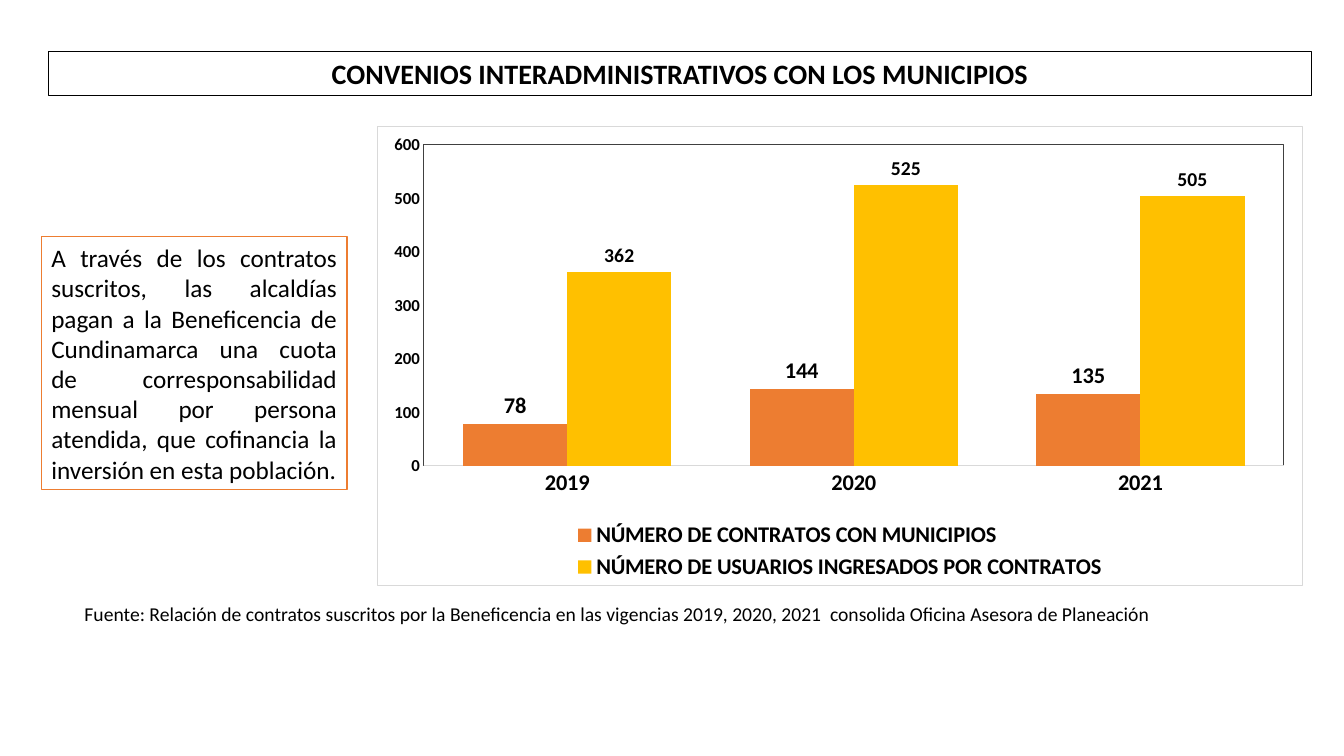
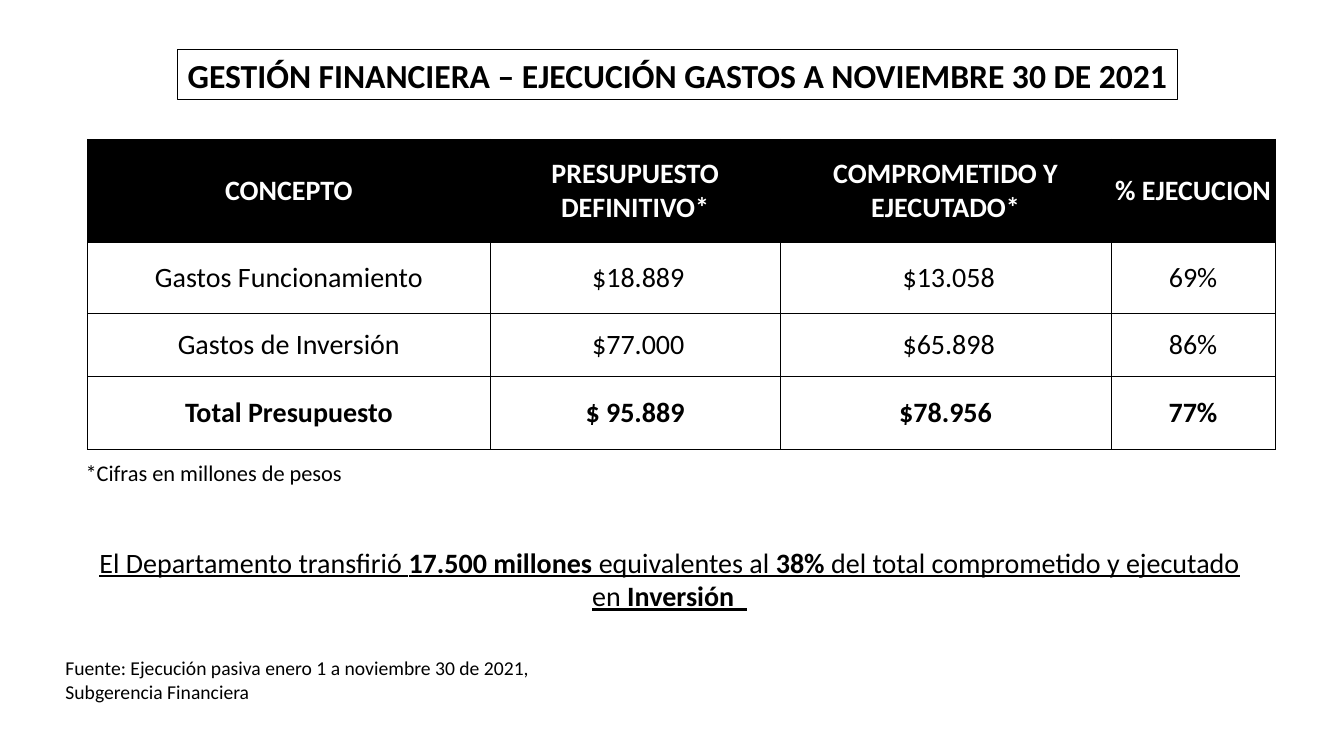
import pptx
import pptx.chart.data
import pptx.dml.color
import pptx.enum.chart
import pptx.enum.text
import pptx.oxml
import pptx.oxml.ns
import pptx.util

BLACK = pptx.dml.color.RGBColor(0x00, 0x00, 0x00)
WHITE = pptx.dml.color.RGBColor(0xFF, 0xFF, 0xFF)
ORANGE = pptx.dml.color.RGBColor(0xED, 0x7D, 0x31)
GOLD = pptx.dml.color.RGBColor(0xFF, 0xC0, 0x00)
PALE_GREY = pptx.dml.color.RGBColor(0xD9, 0xD9, 0xD9)
DARK_GREY = pptx.dml.color.RGBColor(0x40, 0x40, 0x40)
FONT = "Calibri"
ALIGN = pptx.enum.text.PP_ALIGN
MIDDLE = pptx.enum.text.MSO_ANCHOR.MIDDLE

deck = pptx.Presentation()
deck.slide_width = pptx.util.Inches(13.33)
deck.slide_height = pptx.util.Inches(7.5)


def place(left, top, width, height):
    """Turn percentages of the slide's width and height into lengths."""
    sides = (deck.slide_width, deck.slide_height) * 2
    return [int(side * share / 100) for side, share in zip(sides, (left, top, width, height))]


def write(frame, text, size, align=ALIGN.LEFT, bold=False, color=BLACK):
    """Fill a text frame with one paragraph and format its runs."""
    frame.word_wrap = True
    para = frame.paragraphs[0]
    para.text = text
    para.alignment = align
    for span in para.runs:
        span.font.name = FONT
        span.font.size = pptx.util.Pt(size)
        span.font.bold = bold
        span.font.color.rgb = color
    return para


# Pages with their framed titles
titles = [
    ("CONVENIOS INTERADMINISTRATIVOS CON LOS MUNICIPIOS", 20, (3.6, 6.8, 94, 5.87)),
    ("GESTIÓN FINANCIERA – EJECUCIÓN GASTOS A NOVIEMBRE 30 DE 2021", 24, (13.2, 6.53, 74.42, 6.67)),
]
pages = []
for text, size, area in titles:
    page = deck.slides.add_slide(deck.slide_layouts.get_by_name("Title Only"))
    title = page.shapes.title
    title.left, title.top, title.width, title.height = place(*area)
    title.fill.solid()
    title.fill.fore_color.rgb = WHITE
    title.line.color.rgb = BLACK
    title.line.width = pptx.util.Pt(1)
    write(title.text_frame, text, size, ALIGN.CENTER, bold=True)
    title.text_frame.word_wrap = False
    title.text_frame.auto_size = pptx.enum.text.MSO_AUTO_SIZE.NONE
    title.text_frame.vertical_anchor = MIDDLE
    pages.append(page)
agreements, finance = pages

# Plain notes and sources
notes = [
    (agreements, "Fuente: Relación de contratos suscritos por la Beneficencia en las vigencias "
     "2019, 2020, 2021  consolida Oficina Asesora de Planeación",
     14, ALIGN.JUSTIFY, (5.55, 78.93, 88.97, 4.53)),
    (finance, "*Cifras en millones de pesos", 16, ALIGN.LEFT, (5.63, 60.13, 21.23, 4.93)),
    (finance, "Fuente: Ejecución pasiva enero 1 a noviembre 30 de 2021, Subgerencia Financiera",
     14, ALIGN.LEFT, (4.13, 86.13, 41.41, 7.6)),
]
for page, text, size, align, area in notes:
    write(page.shapes.add_textbox(*place(*area)).text_frame, text, size, align)

# Agreements: framed explanation
box = agreements.shapes.add_textbox(*place(3.08, 31.33, 22.73, 33.47))
box.fill.solid()
box.fill.fore_color.rgb = WHITE
box.line.color.rgb = ORANGE
box.line.width = pptx.util.Pt(1)
box.text_frame.vertical_anchor = MIDDLE
write(box.text_frame,
      "A través de los contratos suscritos, las alcaldías pagan a la Beneficencia de Cundinamarca "
      "una cuota de corresponsabilidad mensual por persona atendida, que cofinancia la inversión "
      "en esta población.", 18, ALIGN.JUSTIFY)

# Agreements: column chart
series_styles = [
    ("NÚMERO DE CONTRATOS CON MUNICIPIOS", (78, 144, 135), ORANGE, 16),
    ("NÚMERO DE USUARIOS INGRESADOS POR CONTRATOS", (362, 525, 505), GOLD, 14),
]
chart_data = pptx.chart.data.CategoryChartData()
chart_data.categories = ["2019", "2020", "2021"]
for name, values, color, label_size in series_styles:
    chart_data.add_series(name, values)
chart = agreements.shapes.add_chart(
    pptx.enum.chart.XL_CHART_TYPE.COLUMN_CLUSTERED,
    *place(28.06, 16.67, 68.87, 60.8), chart_data).chart
chart.has_title = False
chart.font.name = FONT
chart.font.size = pptx.util.Pt(10)
chart.font.bold = True
chart.font.color.rgb = BLACK
chart.has_legend = True
chart.legend.position = pptx.enum.chart.XL_LEGEND_POSITION.BOTTOM
chart.legend.include_in_layout = False
chart.legend.font.size = pptx.util.Pt(16)

for axis, size in ((chart.category_axis, 16), (chart.value_axis, 12)):
    axis.has_major_gridlines = False
    axis.major_tick_mark = pptx.enum.chart.XL_TICK_MARK.NONE
    axis.minor_tick_mark = pptx.enum.chart.XL_TICK_MARK.NONE
    axis.tick_labels.font.size = pptx.util.Pt(size)
    axis.tick_labels.font.bold = True
chart.category_axis.format.line.color.rgb = PALE_GREY
chart.category_axis.format.line.width = pptx.util.Pt(0.75)
chart.value_axis.format.line.fill.background()
chart.value_axis.minimum_scale = 0
chart.value_axis.maximum_scale = 600
chart.value_axis.major_unit = 100

plot = chart.plots[0]
plot.gap_width = 75
plot.overlap = 0
plot.vary_by_categories = False
for series, (name, values, color, label_size) in zip(plot.series, series_styles):
    series.format.fill.solid()
    series.format.fill.fore_color.rgb = color
    labels = series.data_labels
    labels.show_value = True
    labels.position = pptx.enum.chart.XL_LABEL_POSITION.OUTSIDE_END
    labels.font.size = pptx.util.Pt(label_size)
    labels.font.bold = True
    labels.font.color.rgb = BLACK

# Frames of the chart and of its plot area, and the plot area's place
frames = [
    pptx.oxml.parse_xml(
        f'<c:spPr {pptx.oxml.ns.nsdecls("c", "a")}>'
        f'<a:solidFill><a:srgbClr val="{WHITE}"/></a:solidFill>'
        f'<a:ln w="{pptx.util.Pt(0.75)}"><a:solidFill><a:srgbClr val="{color}"/></a:solidFill></a:ln>'
        '</c:spPr>')
    for color in (PALE_GREY, DARK_GREY)]
chart.element.find(pptx.oxml.ns.qn("c:txPr")).addprevious(frames[0])
plot_area = chart.element.find(".//" + pptx.oxml.ns.qn("c:plotArea"))
plot_area.append(frames[1])
for layout in plot_area.findall(pptx.oxml.ns.qn("c:layout")):
    plot_area.remove(layout)
plot_area.insert(0, pptx.oxml.parse_xml(
    f'<c:layout {pptx.oxml.ns.nsdecls("c")}><c:manualLayout><c:layoutTarget val="inner"/>'
    '<c:xMode val="edge"/><c:yMode val="edge"/>'
    '<c:x val="0.05"/><c:y val="0.04"/><c:w val="0.93"/><c:h val="0.7"/>'
    '</c:manualLayout></c:layout>'))

# Finance: spending table
rows = [
    ("CONCEPTO", "PRESUPUESTO DEFINITIVO*", "COMPROMETIDO Y EJECUTADO*", "% EJECUCION"),
    ("Gastos Funcionamiento", " $18.889", " $13.058", "69%"),
    ("Gastos de Inversión", " $77.000", " $65.898", "86%"),
    ("Total Presupuesto", " $ 95.889 ", " $78.956 ", "77%"),
]
column_shares = (29.93, 21.6, 24.6, 12.23)
row_shares = (13.6, 9.47, 8.27, 9.73)
table = finance.shapes.add_table(
    len(rows), len(column_shares),
    *place(6.53, 18.4, sum(column_shares), sum(row_shares))).table
table.horz_banding = False
for column, share in zip(table.columns, column_shares):
    column.width = int(deck.slide_width * share / 100)
for row_number, (row, share) in enumerate(zip(rows, row_shares)):
    table.rows[row_number].height = int(deck.slide_height * share / 100)
    is_header = row_number == 0
    is_bold = row_number in (0, len(rows) - 1)
    for column_number, text in enumerate(row):
        cell = table.cell(row_number, column_number)
        cell.fill.solid()
        cell.fill.fore_color.rgb = BLACK if is_header else WHITE
        cell.vertical_anchor = MIDDLE
        cell.margin_left = cell.margin_right = cell.margin_top = pptx.util.Inches(0.01)
        cell.margin_bottom = 0
        write(cell.text_frame, text, 20, ALIGN.CENTER, is_bold, WHITE if is_header else BLACK)
        for position, side in enumerate(("lnL", "lnR", "lnT", "lnB")):
            cell._tc.get_or_add_tcPr().insert(position, pptx.oxml.parse_xml(
                f'<a:{side} {pptx.oxml.ns.nsdecls("a")} w="{pptx.util.Pt(0.5)}">'
                f'<a:solidFill><a:srgbClr val="{BLACK}"/></a:solidFill></a:{side}>'))

# Finance: underlined statement with bold figures
statement = finance.shapes.add_textbox(*place(6.53, 71.47, 86.57, 10.27))
pieces = ("El Departamento transfirió ", "17.500 millones ", "equivalentes al ", "38%",
          " del total comprometido y ejecutado en ", "Inversión", "  ")
para = write(statement.text_frame, "", 20, ALIGN.CENTER)
for number, text in enumerate(pieces):
    span = para.add_run()
    span.text = text
    span.font.name = FONT
    span.font.size = pptx.util.Pt(20)
    span.font.color.rgb = BLACK
    span.font.underline = True
    span.font.bold = number % 2 == 1

deck.save("out.pptx")
